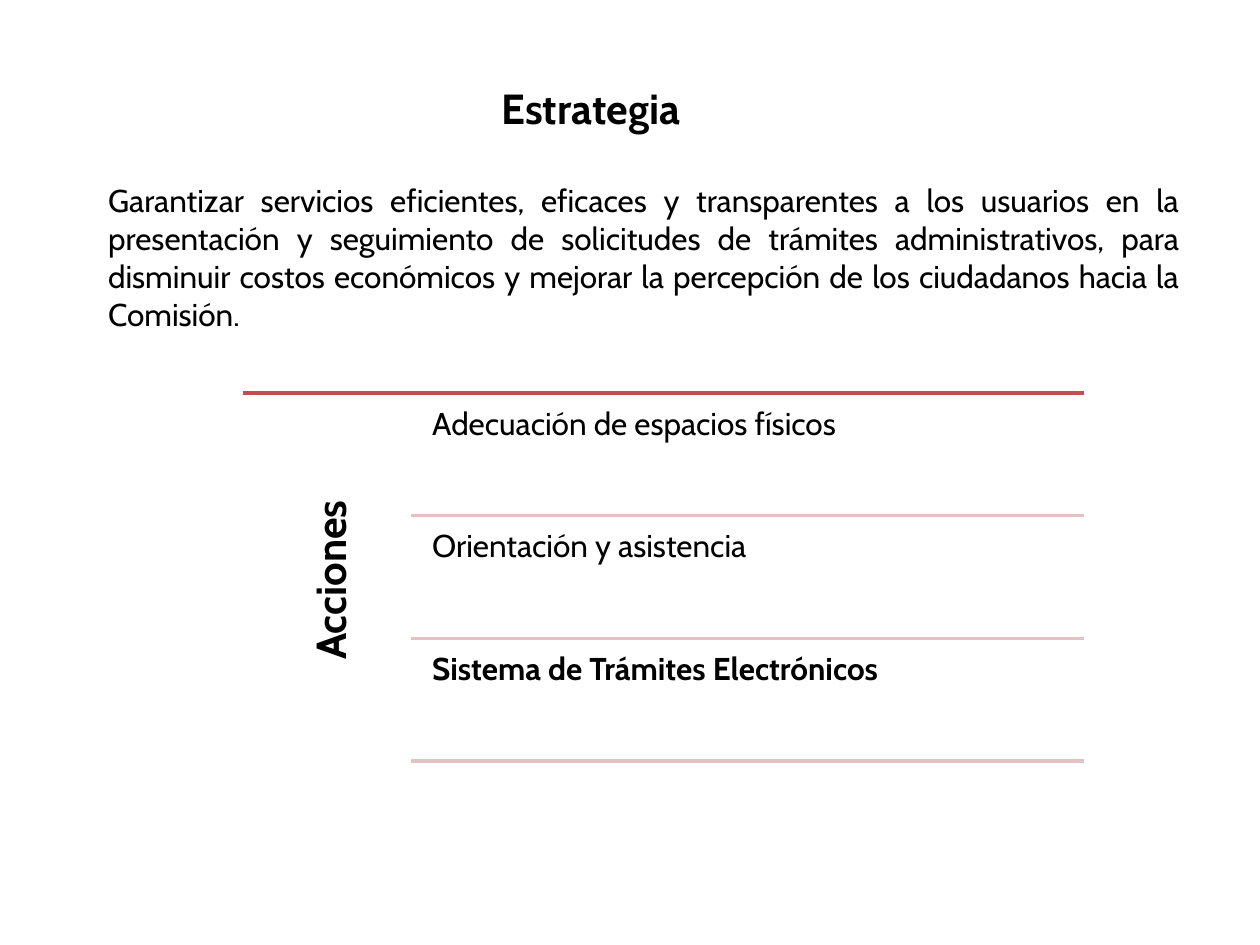
from lxml import etree
from pptx import Presentation
from pptx.dml.color import RGBColor
from pptx.enum import shapes, text
from pptx.oxml import ns
from pptx.util import Pt

BLACK = RGBColor(0x00, 0x00, 0x00)
RED = RGBColor(0xC0, 0x50, 0x4D)
PINK = RGBColor(0xE2, 0xC2, 0xC2)
FONT = "Cabin"

TITLE = "Estrategia"
STRATEGY = (
    "Garantizar servicios eficientes, eficaces y transparentes a los usuarios "
    "en la presentación y seguimiento de solicitudes de trámites "
    "administrativos, para disminuir costos económicos y mejorar la percepción "
    "de los ciudadanos hacia la Comisión."
)
HEADING = "Acciones"
ACTIONS = [
    ("Adecuación de espacios físicos", False),
    ("Orientación y asistencia", False),
    ("Sistema de Trámites Electrónicos", True),
]

LIST_LEFT, LIST_TOP, LIST_RIGHT = 139, 224.6, 619.2
RULE_LEFT, ACTION_LEFT = 234.7, 242
ROW_PITCH, ROW_GAP = 70.1, 3.5


def add_text(slide, content, left, top, width, height, size=18, bold=False,
             align=text.PP_ALIGN.LEFT, anchor=text.MSO_ANCHOR.TOP,
             insets=(7.2, 3.6, 7.2, 3.6), line_spacing=1.0, vertical=None):
    box = slide.shapes.add_textbox(Pt(left), Pt(top), Pt(width), Pt(height))
    frame = box.text_frame
    frame.word_wrap = True
    frame.vertical_anchor = anchor
    (frame.margin_left, frame.margin_top,
     frame.margin_right, frame.margin_bottom) = map(Pt, insets)
    if vertical:
        frame._txBody.bodyPr.set("vert", vertical)
    paragraph = frame.paragraphs[0]
    paragraph.alignment = align
    paragraph.line_spacing = line_spacing
    run = paragraph.add_run()
    run.text = content
    run.font.name = FONT
    run.font.size = Pt(size)
    run.font.bold = bold
    run.font.color.rgb = BLACK


def add_rule(slide, left, y, color):
    rule = slide.shapes.add_connector(
        shapes.MSO_CONNECTOR.STRAIGHT, Pt(left), Pt(y), Pt(LIST_RIGHT), Pt(y))
    rule.line.color.rgb = color
    rule.line.width = Pt(2)
    etree.SubElement(rule._element.spPr, ns.qn("a:effectLst"))


def main():
    presentation = Presentation()
    presentation.slide_width, presentation.slide_height = Pt(720), Pt(540)
    slide = presentation.slides.add_slide(presentation.slide_layouts[6])

    add_text(slide, STRATEGY, 54.7, 100, 626.4, 371,
             align=text.PP_ALIGN.JUSTIFY)
    add_text(slide, TITLE, 127.4, 49, 420.5, 25, size=24, bold=True,
             align=text.PP_ALIGN.CENTER, anchor=text.MSO_ANCHOR.MIDDLE)

    add_rule(slide, LIST_LEFT, LIST_TOP, RED)
    add_text(slide, HEADING, LIST_LEFT, LIST_TOP, 95.7, 213.8, size=24,
             bold=True, align=text.PP_ALIGN.CENTER,
             insets=(38, 5.8, 5.8, 5.8), line_spacing=0.9, vertical="vert270")
    for row, (action, bold) in enumerate(ACTIONS):
        top = LIST_TOP + row * ROW_PITCH
        add_text(slide, action, ACTION_LEFT, top + ROW_GAP,
                 LIST_RIGHT - ACTION_LEFT, ROW_PITCH - ROW_GAP, bold=bold,
                 insets=(5, 5, 5, 5), line_spacing=0.9)
        add_rule(slide, RULE_LEFT, top + ROW_PITCH, PINK)

    presentation.save("out.pptx")


if __name__ == "__main__":
    main()
